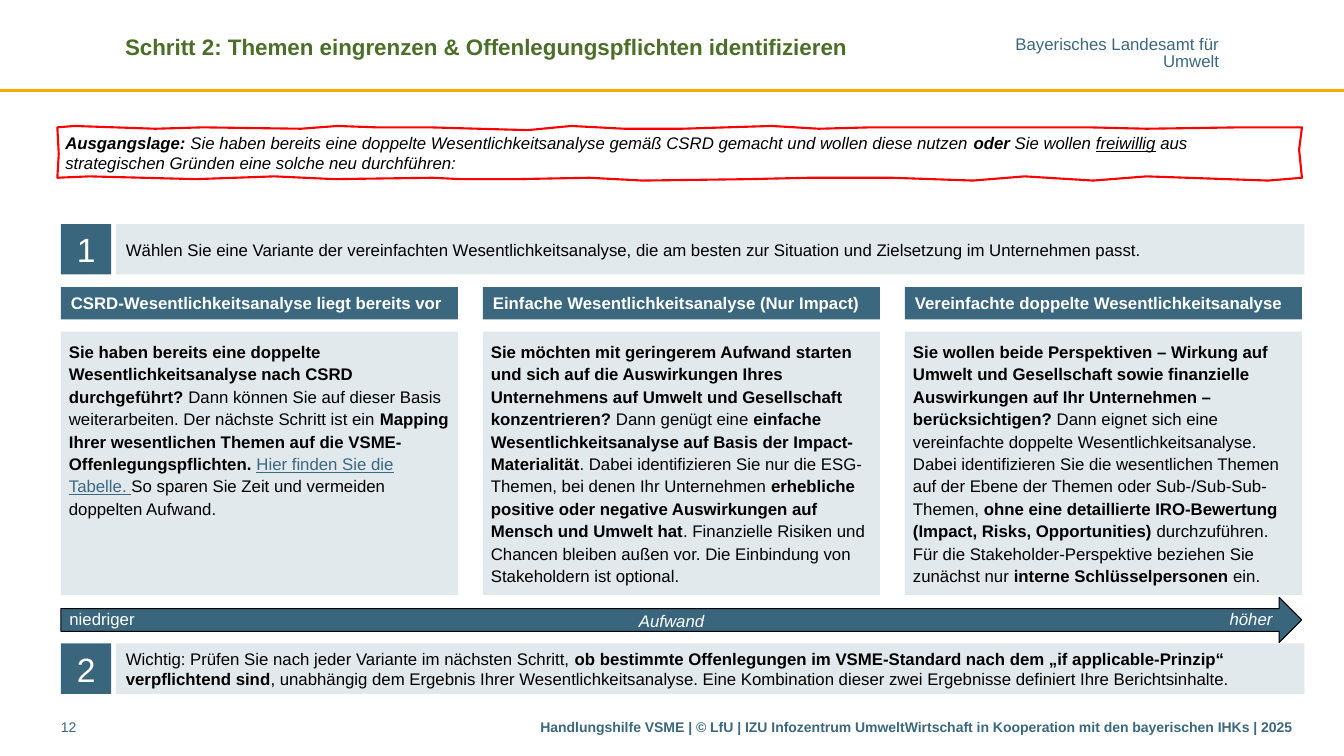
from dataclasses import dataclass
from typing import NamedTuple

from lxml.etree import SubElement
from pptx import Presentation
from pptx.dml.color import RGBColor
from pptx.enum.shapes import MSO_CONNECTOR as Connector, MSO_SHAPE as Preset
from pptx.enum.text import MSO_ANCHOR as Anchor, PP_ALIGN as Align
from pptx.oxml.ns import qn
from pptx.util import Pt

COLORS = {
    "petrol": "3B687F", "deep": "3A667D", "mist": "E1E9ED", "green": "4B6E28",
    "amber": "F9AA00", "red": "FF0000", "black": "000000", "white": "FFFFFF",
}
MARGIN = 43.5
WOBBLE = 0.72


class Run(NamedTuple):
    text: str
    bold: bool = False
    italic: bool = False
    underline: bool = False
    color: str = ""


class Wave(NamedTuple):
    end: float
    first_pull: int
    second_pull: int


class Variant(NamedTuple):
    heading: str
    body: list[Run]


class Step(NamedTuple):
    number: str
    top: float
    body: list[Run]


@dataclass
class Box:
    left: float
    top: float
    width: float
    height: float
    paragraphs: list[list[Run]]
    fill: str = ""
    color: str = "black"
    size: float = 12
    align: Align = Align.LEFT
    anchor: Anchor = Anchor.TOP
    insets: tuple[float, float, float, float] = (7.2, 3.6, 7.2, 3.6)
    spacing: float | Pt | None = None
    wrap: bool = True


VARIANTS = [
    Variant("CSRD-Wesentlichkeitsanalyse liegt bereits vor", [
        Run("Sie haben bereits eine doppelte Wesentlichkeitsanalyse nach CSRD durchgeführt? ", bold=True),
        Run("Dann können Sie auf dieser Basis weiterarbeiten. Der nächste Schritt ist ein "),
        Run("Mapping Ihrer wesentlichen Themen auf die VSME-Offenlegungspflichten. ", bold=True),
        Run("Hier finden Sie die Tabelle. ", underline=True, color="petrol"),
        Run("So sparen Sie Zeit und vermeiden doppelten Aufwand."),
    ]),
    Variant("Einfache Wesentlichkeitsanalyse (Nur Impact)", [
        Run("Sie möchten mit geringerem Aufwand starten und sich auf die Auswirkungen Ihres "
            "Unternehmens auf Umwelt und Gesellschaft konzentrieren? ", bold=True),
        Run("Dann genügt eine "),
        Run("einfache Wesentlichkeitsanalyse auf Basis der Impact-Materialität", bold=True),
        Run(". Dabei identifizieren Sie nur die ESG-Themen, bei denen Ihr Unternehmen "),
        Run("erhebliche positive oder negative Auswirkungen auf Mensch und Umwelt hat", bold=True),
        Run(". Finanzielle Risiken und Chancen bleiben außen vor. "
            "Die Einbindung von Stakeholdern ist optional."),
    ]),
    Variant("Vereinfachte doppelte Wesentlichkeitsanalyse", [
        Run("Sie wollen beide Perspektiven – Wirkung auf Umwelt und Gesellschaft sowie finanzielle "
            "Auswirkungen auf Ihr Unternehmen – berücksichtigen? ", bold=True),
        Run("Dann eignet sich eine vereinfachte doppelte Wesentlichkeitsanalyse. Dabei identifizieren "
            "Sie die wesentlichen Themen auf der Ebene der Themen oder Sub-/Sub-Sub-Themen, "),
        Run("ohne eine detaillierte IRO-Bewertung (Impact, Risks, Opportunities)", bold=True),
        Run(" durchzuführen. Für die Stakeholder-Perspektive beziehen Sie zunächst nur "),
        Run("interne Schlüsselpersonen", bold=True),
        Run(" ein."),
    ]),
]
STEPS = [
    Step("1", 160.1, [
        Run("Wählen Sie eine Variante der vereinfachten Wesentlichkeitsanalyse, die am besten "
            "zur Situation und Zielsetzung im Unternehmen passt."),
    ]),
    Step("2", 459.6, [
        Run("Wichtig: Prüfen Sie nach jeder Variante im nächsten Schritt, "),
        Run("ob bestimmte Offenlegungen im VSME-Standard nach dem „if applicable-Prinzip“ "
            "verpflichtend sind", bold=True),
        Run(", unabhängig dem Ergebnis Ihrer Wesentlichkeitsanalyse. "
            "Eine Kombination dieser zwei Ergebnisse definiert Ihre Berichtsinhalte."),
    ]),
]
STARTING_POINT = [
    Run("Ausgangslage: ", bold=True, italic=True),
    Run("Sie haben bereits eine doppelte Wesentlichkeitsanalyse gemäß CSRD gemacht "
        "und wollen diese nutzen ", italic=True),
    Run("oder", bold=True, italic=True),
    Run(" Sie wollen ", italic=True),
    Run("freiwillig", italic=True, underline=True),
    Run(" aus strategischen Gründen eine solche neu durchführen:", italic=True),
]
TOP_EDGE = [Wave(*wave) for wave in (
    (75.6, -2, -2), (128, 1, 2), (180, -3, 1), (232.5, -2, 3), (258, -4, 1), (292, -2, 1),
    (336, -2, -1), (397, 1, 3), (431, -4, -3), (475, 2, -2), (510, 1, 0), (571, -1, -3),
    (614, 2, -2), (639, -2, 1), (674, -1, 0), (700, -1, 1), (743, -2, -1), (796, 0, -2),
    (865, 2, 0), (929.5, -1, 1))]
BOTTOM_EDGE = [Wave(*wave) for wave in (
    (860, 5, 1), (798, -1, -3), (773, 3, 4), (712, 0, -4), (660, 4, 4), (590, -3, 1),
    (555, -1, -1), (494, 1, -1), (441, 1, 3), (380, -2, -1), (346, 1, -1), (320, 1, 2),
    (286, -2, 1), (216, 0, 3), (155, -3, -2), (111, 2, 2), (41, -2, -4))]


def rgb(name: str) -> RGBColor:
    """Look up a colour by name."""
    return RGBColor.from_string(COLORS[name])


def write_text(shape, box: Box) -> None:
    """Fill a shape with formatted paragraphs."""
    frame = shape.text_frame
    frame.word_wrap = box.wrap
    frame.vertical_anchor = box.anchor
    frame.margin_left, frame.margin_top, frame.margin_right, frame.margin_bottom = map(Pt, box.insets)
    for index, runs in enumerate(box.paragraphs):
        paragraph = frame.add_paragraph() if index else frame.paragraphs[0]
        paragraph.alignment = box.align
        paragraph.line_spacing = box.spacing
        for part in runs:
            run = paragraph.add_run()
            run.text = part.text
            font = run.font
            font.name, font.size = "Arial", Pt(box.size)
            font.bold, font.italic, font.underline = part.bold, part.italic, part.underline
            font.color.rgb = rgb(part.color or box.color)


def draw_box(slide, box: Box) -> None:
    """Draw a filled rectangle or a plain text box."""
    place = [Pt(length) for length in (box.left, box.top, box.width, box.height)]
    if box.fill:
        shape = slide.shapes.add_shape(Preset.RECTANGLE, *place)
        shape.shadow.inherit = False
        shape.fill.solid()
        shape.fill.fore_color.rgb = rgb(box.fill)
        shape.line.fill.background()
    else:
        shape = slide.shapes.add_textbox(*place)
    write_text(shape, box)


def wavy_edge(start: float, base: float, waves: list[Wave]) -> list[tuple[float, float]]:
    """Place one crest per wave, on the side of its stronger pull."""
    crests = []
    for wave in waves:
        t = 1 / 3 if abs(wave.first_pull) >= abs(wave.second_pull) else 2 / 3
        pull = 3 * t * (1 - t) * ((1 - t) * wave.first_pull + t * wave.second_pull)
        crests.append((start + t * (wave.end - start), base + WOBBLE * pull))
        start = wave.end
    return crests


def draw_starting_point(slide) -> None:
    """Draw the hand-drawn red frame with the starting point."""
    left, right, top, bottom = 41, 929.5, 91.4, 127.4
    outline = wavy_edge(left, top, TOP_EDGE) + [(right, top), (right - 1, 107), (right, bottom)]
    outline += wavy_edge(right, bottom, BOTTOM_EDGE) + [(left, bottom), (left + 1, 110)]
    builder = slide.shapes.build_freeform(left, top, scale=Pt(1))
    builder.add_line_segments(outline, close=True)
    frame = builder.convert_to_shape()
    frame.shadow.inherit = False
    frame.fill.background()
    frame.line.color.rgb, frame.line.width = rgb("red"), Pt(1.5)
    write_text(frame, Box(left, top, right - left, bottom - top, [STARTING_POINT],
                          insets=(5.7, 5, 12, 3.6)))


def draw_header(slide) -> None:
    """Draw the rule, the publisher and the title."""
    rule = slide.shapes.add_connector(Connector.STRAIGHT, Pt(0), Pt(64.8), Pt(960), Pt(64.8))
    rule.line.color.rgb, rule.line.width = rgb("amber"), Pt(2)
    SubElement(rule.element.spPr, qn("a:effectLst"))
    draw_box(slide, Box(724.6, 26.4, 146.2, 24.5, [[Run("Bayerisches Landesamt für")], [Run("Umwelt")]],
                        color="petrol", align=Align.RIGHT, insets=(0, 0, 0, 0), spacing=0.85, wrap=False))
    title = slide.shapes.title
    title.left, title.top, title.width, title.height = Pt(82.1), Pt(20.2), Pt(614.2), Pt(46.1)
    heading = Run("Schritt 2: Themen eingrenzen & Offenlegungspflichten identifizieren", bold=True)
    write_text(title, Box(82.1, 20.2, 614.2, 46.1, [[heading]], color="green", size=16))


def draw_effort_arrow(slide) -> None:
    """Draw the effort arrow and its labels."""
    arrow = slide.shapes.add_shape(Preset.RIGHT_ARROW, Pt(MARGIN), Pt(426.6), Pt(886.3), Pt(32.4))
    arrow.shadow.inherit = False
    arrow.fill.solid()
    arrow.fill.fore_color.rgb = rgb("deep")
    arrow.line.color.rgb, arrow.line.width = rgb("black"), Pt(0.75)
    for left, top, width, label in ((449.3, 432.7, 61.2, Run("Aufwand", italic=True)),
                                    (42.5, 431.3, 61.2, Run("niedriger")),
                                    (871.2, 431.3, 45.4, Run("höher", italic=True))):
        draw_box(slide, Box(left, top, width, 21.6, [[label]], color="white", wrap=False))


def main() -> None:
    """Build the slide and save it."""
    deck = Presentation()
    deck.slide_width, deck.slide_height = Pt(960), Pt(540)
    slide = deck.slides.add_slide(deck.slide_layouts[5])
    draw_header(slide)
    for column, variant in enumerate(VARIANTS):
        left = MARGIN + column * 301.45
        draw_box(slide, Box(left, 205.1, 283.5, 23, [[Run(variant.heading, bold=True)]],
                            fill="petrol", color="white", anchor=Anchor.MIDDLE))
        draw_box(slide, Box(left, 236.9, 283.5, 188, [variant.body], fill="mist",
                            insets=(5.7, 5.7, 5.7, 5.7), spacing=Pt(16)))
    draw_effort_arrow(slide)
    for step in STEPS:
        draw_box(slide, Box(MARGIN, step.top, 36, 36, [[Run(step.number)]], fill="deep", color="white",
                            size=24, align=Align.CENTER, anchor=Anchor.MIDDLE, insets=(0, 0, 0, 0)))
        draw_box(slide, Box(82.8, step.top, 848.9, 36, [step.body], fill="mist", anchor=Anchor.MIDDLE))
    draw_starting_point(slide)
    draw_box(slide, Box(MARGIN, 509.8, 50.4, 22.3, [[Run("12")]], color="petrol", size=10,
                        insets=(0, 3.6, 0, 3.6)))
    imprint = Run("Handlungshilfe VSME | © LfU | IZU Infozentrum UmweltWirtschaft in Kooperation "
                  "mit den bayerischen IHKs | 2025", bold=True)
    draw_box(slide, Box(372.6, 509.8, 557.3, 22.3, [[imprint]], color="petrol", size=10, align=Align.RIGHT))
    deck.save("out.pptx")


if __name__ == "__main__":
    main()
